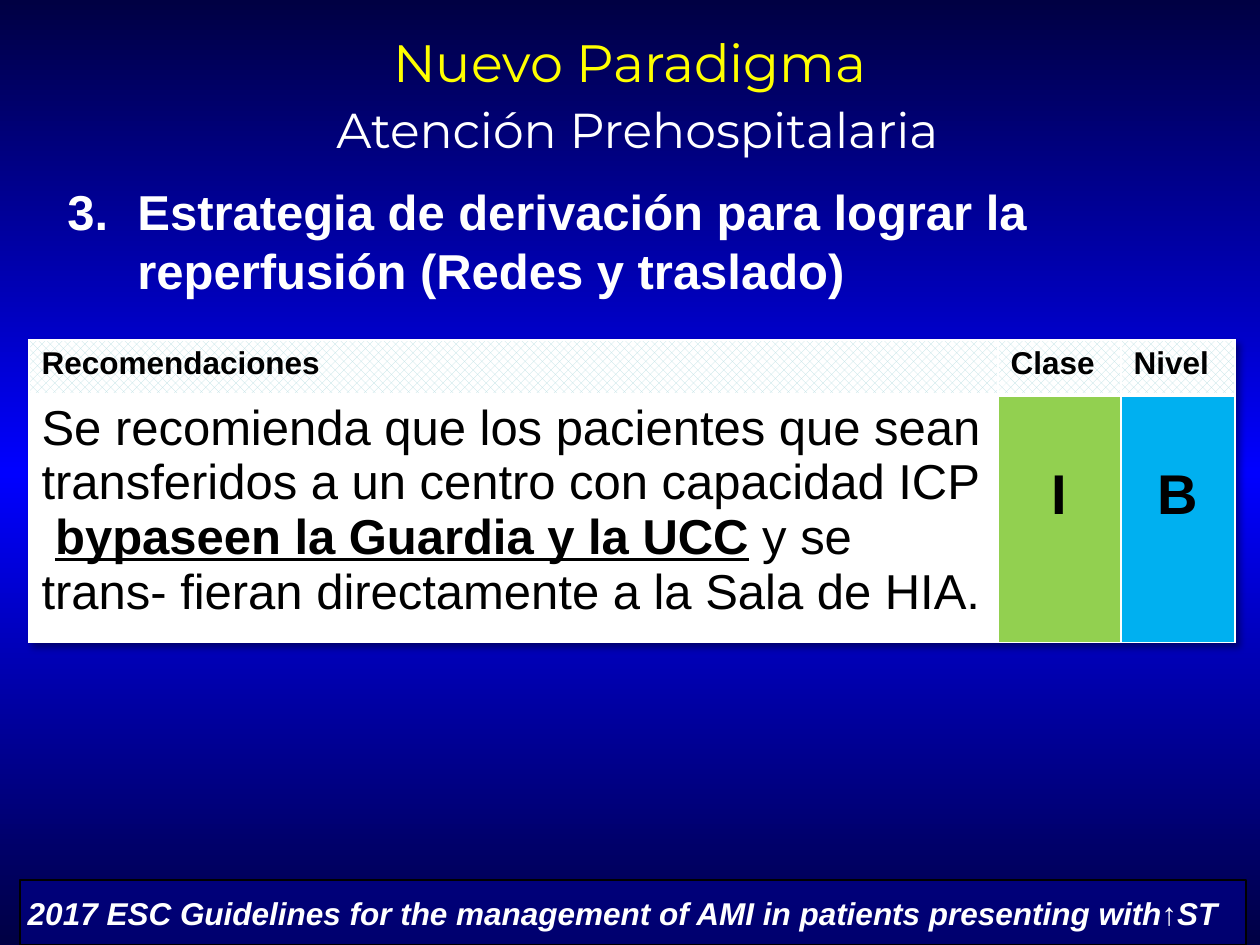
from copy import deepcopy

from lxml.etree import SubElement
from pptx import Presentation
from pptx.dml.color import RGBColor
from pptx.enum.dml import MSO_PATTERN
from pptx.enum.shapes import MSO_SHAPE
from pptx.enum.text import MSO_ANCHOR, PP_ALIGN
from pptx.oxml import parse_xml
from pptx.oxml.ns import nsdecls, qn
from pptx.util import Pt

EMU_PER_PX = 914400 / 126

NIGHT = RGBColor(0x00, 0x00, 0x43)
BLUE = RGBColor(0x00, 0x00, 0xFF)
NAVY = RGBColor(0x00, 0x00, 0x99)
YELLOW = RGBColor(0xFF, 0xFF, 0x00)
WHITE = RGBColor(0xFF, 0xFF, 0xFF)
BLACK = RGBColor(0x00, 0x00, 0x00)
TEAL = RGBColor(0xBB, 0xE0, 0xE3)
GREEN = RGBColor(0x92, 0xD0, 0x50)
SKY = RGBColor(0x00, 0xB0, 0xF0)


def px(*lengths):
    return [round(length * EMU_PER_PX) for length in lengths]


class SlideBuilder:
    body_font = "Arial"
    title_font = "Montserrat"

    def __init__(self, slide):
        self.slide = slide

    def style(self, font, size, color, bold=False, italic=False, name=None):
        font.name = name or self.body_font
        font.size = Pt(size)
        font.color.rgb = color
        font.bold = bold
        font.italic = italic

    def background(self, edge, middle):
        fill = self.slide.background.fill
        fill.gradient()
        fill.gradient_angle = 90
        for stop in fill.gradient_stops:
            stop.color.rgb = edge
        stops = self.slide.element.find(".//" + qn("a:gsLst"))
        stops.insert(1, deepcopy(stops[0]))
        for stop, position in zip(fill.gradient_stops, (0, 0.5, 1)):
            stop.position = position
        fill.gradient_stops[1].color.rgb = middle

    def text_box(self, box, align=PP_ALIGN.LEFT, anchor=MSO_ANCHOR.TOP):
        frame = self.slide.shapes.add_textbox(*px(*box)).text_frame
        frame.word_wrap = True
        frame.vertical_anchor = anchor
        frame.paragraphs[0].alignment = align
        return frame.paragraphs[0]

    def title(self, box, heading, subheading):
        paragraph = self.text_box(box, PP_ALIGN.CENTER, MSO_ANCHOR.MIDDLE)
        for text, size, color in ((heading, 30, YELLOW), (" ", 32, YELLOW),
                                  (subheading, 28, WHITE)):
            run = paragraph.add_run()
            run.text = text
            self.style(run.font, size, color, name=self.title_font)
            if text == heading:
                paragraph.add_line_break()

    def numbered(self, box, text, number, indent):
        paragraph = self.text_box(box)
        paragraph.text = text
        self.style(paragraph.font, 28, WHITE, bold=True)
        properties = paragraph._p.get_or_add_pPr()
        hang = px(indent)[0]
        properties.set("marL", str(hang))
        properties.set("indent", str(-hang))
        properties.insert(0, parse_xml(
            f'<a:buAutoNum {nsdecls("a")} type="arabicPeriod" startAt="{number}"/>'))

    def bar(self, box, color, opacity):
        shape = self.slide.shapes.add_shape(MSO_SHAPE.RECTANGLE, *px(*box))
        shape.shadow.inherit = False
        shape.fill.solid()
        shape.fill.fore_color.rgb = color
        rgb = shape.element.spPr.find(qn("a:solidFill"))[0]
        SubElement(rgb, qn("a:alpha")).set("val", str(opacity * 1000))
        shape.line.color.rgb = BLACK
        shape.line.width = Pt(0.75)

    def citation(self, box, text):
        paragraph = self.text_box(box, PP_ALIGN.CENTER)
        paragraph.text = text
        self.style(paragraph.font, 18, WHITE, bold=True, italic=True)

    def table(self, box, widths, heights):
        frame = self.slide.shapes.add_table(len(heights), len(widths), *px(*box))
        table = frame.table
        for column, width in zip(table.columns, px(*widths)):
            column.width = width
        for row, height in zip(table.rows, px(*heights)):
            row.height = height
        table._tbl.tblPr.insert(0, parse_xml(
            f'<a:effectLst {nsdecls("a")}><a:outerShdw blurRad="50800" dist="38100" '
            'dir="2700000"><a:srgbClr val="000000"><a:alpha val="40000"/>'
            '</a:srgbClr></a:outerShdw></a:effectLst>'))
        return table

    def cell(self, cell, lines, size, fill=None, bold=True,
             align=PP_ALIGN.LEFT, top=6, bottom_line=1):
        cell.margin_top = px(top)[0]
        paragraph = cell.text_frame.paragraphs[0]
        paragraph.alignment = align
        self.style(paragraph.font, size, BLACK, bold=bold)
        for number, line in enumerate(lines):
            if number:
                paragraph.add_line_break()
            for text, emphasis in line:
                run = paragraph.add_run()
                run.text = text
                self.style(run.font, size, BLACK, bold=bold or emphasis)
                run.font.underline = emphasis
        if fill is None:
            cell.fill.patterned()
            cell.fill.pattern = MSO_PATTERN.PERCENT_50
            cell.fill.fore_color.rgb = TEAL
            cell.fill.back_color.rgb = WHITE
        else:
            cell.fill.solid()
            cell.fill.fore_color.rgb = fill
        borders = (("L", 1), ("R", 1), ("T", 1), ("B", bottom_line))
        for place, (side, width) in enumerate(borders):
            cell._tc.get_or_add_tcPr().insert(place, parse_xml(
                f'<a:ln{side} {nsdecls("a")} w="{Pt(width)}"><a:solidFill>'
                f'<a:srgbClr val="{WHITE}"/></a:solidFill></a:ln{side}>'))


def main():
    deck = Presentation()
    deck.slide_width, deck.slide_height = px(1260, 945)
    builder = SlideBuilder(deck.slides.add_slide(deck.slide_layouts[6]))
    builder.background(NIGHT, BLUE)

    # Title and numbered strategy
    builder.title((63, 16, 1134, 158), "Nuevo Paradigma", "Atención Prehospitalaria")
    builder.bar((20, 880, 1226, 65), NAVY, 51)
    builder.numbered(
        (55, 175, 1142, 159),
        "Estrategia de derivación para lograr la reperfusión (Redes y traslado)",
        number=3, indent=70)

    # Source of the recommendation
    builder.citation(
        (10, 888, 1235, 50),
        "2017 ESC Guidelines for the management of AMI in patients presenting with↑ST ")

    # Recommendation with its class and level
    grades = builder.table((29, 340, 1206, 302), (969, 123, 114), (55, 247))
    for column, heading in enumerate(("Recomendaciones", "Clase", "Nivel")):
        builder.cell(grades.cell(0, column), [[(heading, False)]], 18, bottom_line=3)
    recommendation = [
        [("Se recomienda que los pacientes que sean transferidos a un centro "
          "con capacidad ICP", False)],
        [(" ", False),
         ("bypaseen la Guardia y la UCC", True),
         (" y se trans- fieran directamente a la Sala de HIA.", False)],
    ]
    builder.cell(grades.cell(1, 0), recommendation, 28, WHITE, bold=False)
    for column, (grade, color) in enumerate((("I", GREEN), ("B", SKY)), start=1):
        builder.cell(grades.cell(1, column), [[(grade, False)]], 32, color,
                     align=PP_ALIGN.CENTER, top=69)

    deck.save("out.pptx")


if __name__ == "__main__":
    main()
